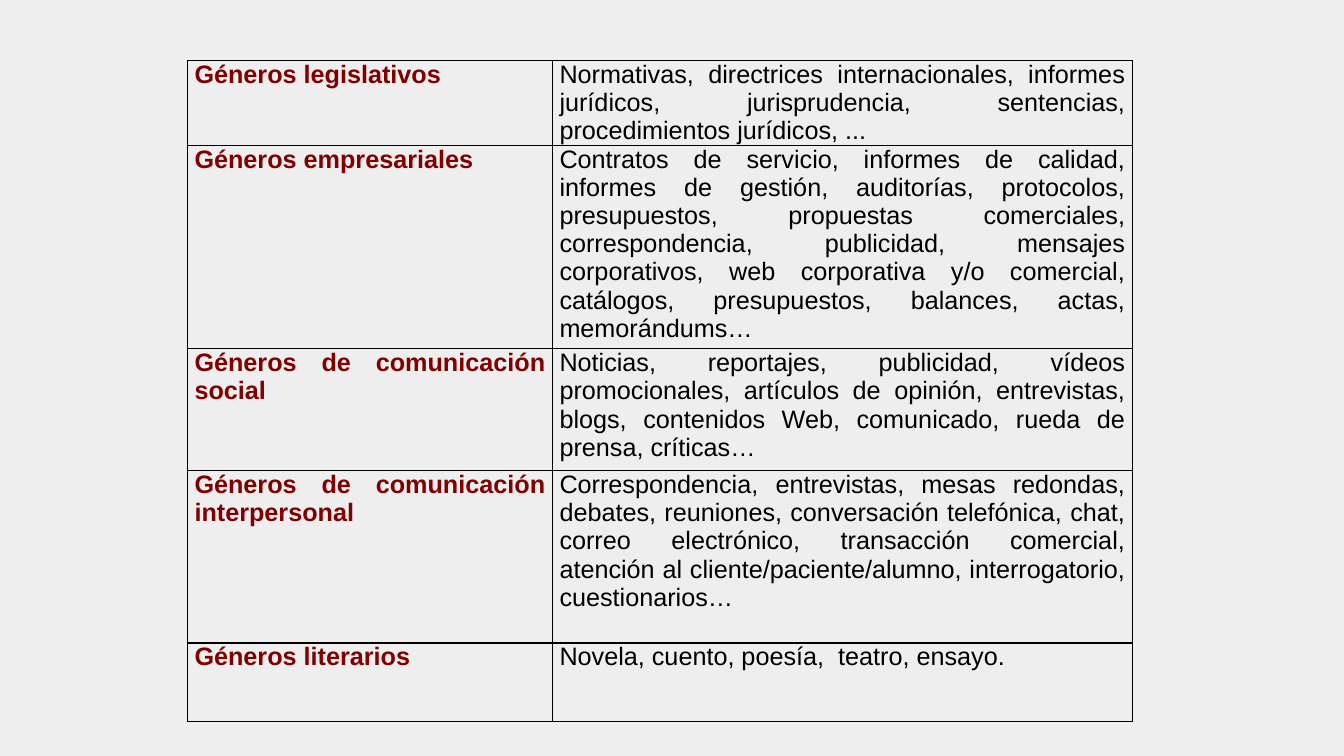
from dataclasses import dataclass

from lxml import etree
from pptx import Presentation
from pptx import util as u
from pptx.dml import color
from pptx.enum import text
from pptx.oxml import ns


@dataclass(frozen=True)
class Theme:
    back: str = "EEEEEE"
    head: str = "800000"
    body: str = "000000"
    rule: str = "000000"
    font: str = "Arial"
    size: int = 18
    line: int = 1


THEME = Theme()
BOX = (1.86, 0.6)
COLS = (3.62, 5.75)
GENRES = [
    (0.81, "Géneros legislativos",
     "Normativas, directrices internacionales, informes jurídicos, "
     "jurisprudencia, sentencias, procedimientos jurídicos, ..."),
    (2.02, "Géneros empresariales",
     "Contratos de servicio, informes de calidad, informes de gestión, "
     "auditorías, protocolos, presupuestos, propuestas comerciales, "
     "correspondencia, publicidad, mensajes corporativos, web corporativa "
     "y/o comercial, catálogos, presupuestos, balances, actas, memorándums…"),
    (1.21, "Géneros de comunicación social",
     "Noticias, reportajes, publicidad, vídeos promocionales, artículos de "
     "opinión, entrevistas, blogs, contenidos Web, comunicado, rueda de "
     "prensa, críticas…"),
    (1.71, "Géneros de comunicación interpersonal",
     "Correspondencia, entrevistas, mesas redondas, debates, reuniones, "
     "conversación telefónica, chat, correo electrónico, transacción "
     "comercial, atención al cliente/paciente/alumno, interrogatorio, "
     "cuestionarios…"),
    (0.78, "Géneros literarios", "Novela, cuento, poesía,  teatro, ensayo. "),
]


def apply(item, values):
    for name, value in values.items():
        setattr(item, name, value)


def border(cell):
    """Rule all four sides; must run before the cell's fill is set."""
    props = cell._tc.get_or_add_tcPr()
    for side in ("lnL", "lnR", "lnT", "lnB"):
        line = etree.SubElement(props, ns.qn(f"a:{side}"),
                                w=str(u.Pt(THEME.line)))
        fill = etree.SubElement(line, ns.qn("a:solidFill"))
        etree.SubElement(fill, ns.qn("a:srgbClr"), val=THEME.rule)


def write(cell, words, tint, bold):
    border(cell)
    cell.fill.background()
    apply(cell, {"margin_left": u.Inches(0.07), "margin_right": u.Inches(0.07),
                 "margin_top": 0, "margin_bottom": 0})
    para = cell.text_frame.paragraphs[0]
    para.alignment = text.PP_ALIGN.JUSTIFY
    run = para.add_run()
    run.text = words
    apply(run.font, {"name": THEME.font, "size": u.Pt(THEME.size),
                     "bold": bold})
    run.font.color.rgb = color.RGBColor.from_string(tint)


def genre_table(slide, left, top):
    high = sum(row[0] for row in GENRES)
    frame = slide.shapes.add_table(
        len(GENRES), len(COLS), u.Inches(left), u.Inches(top),
        u.Inches(sum(COLS)), u.Inches(high))
    table = frame.table
    apply(table, {"first_row": False, "horz_banding": False})
    for col, width in zip(table.columns, COLS):
        col.width = u.Inches(width)
    for row, (height, genre, texts) in zip(table.rows, GENRES):
        row.height = u.Inches(height)
        write(row.cells[0], genre, THEME.head, True)
        write(row.cells[1], texts, THEME.body, False)


def main():
    deck = Presentation()
    apply(deck, {"slide_width": u.Inches(13.33),
                 "slide_height": u.Inches(7.5)})
    slide = deck.slides.add_slide(deck.slide_layouts[6])
    fill = slide.background.fill
    fill.solid()
    fill.fore_color.rgb = color.RGBColor.from_string(THEME.back)
    genre_table(slide, *BOX)
    deck.save("out.pptx")


if __name__ == "__main__":
    main()
